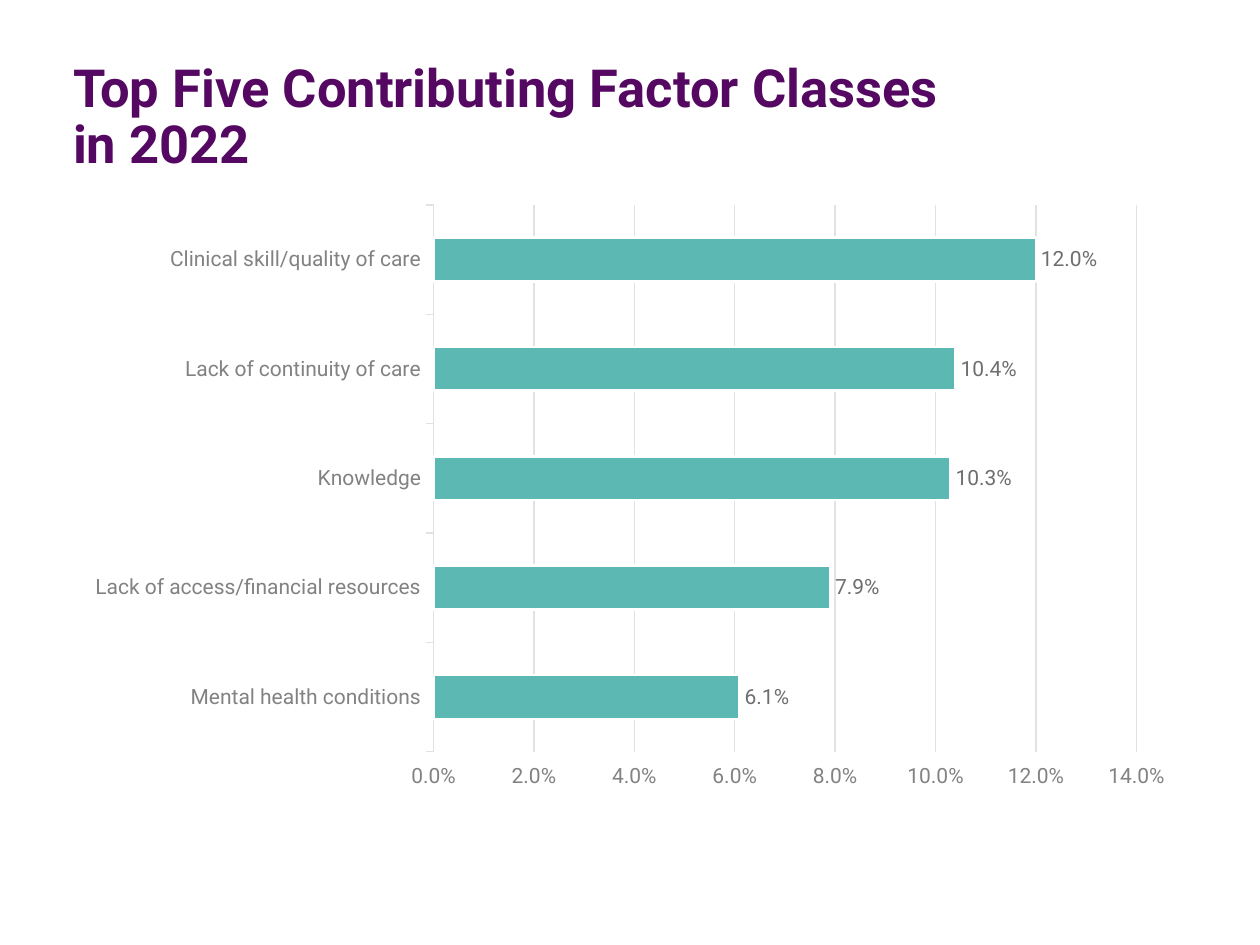
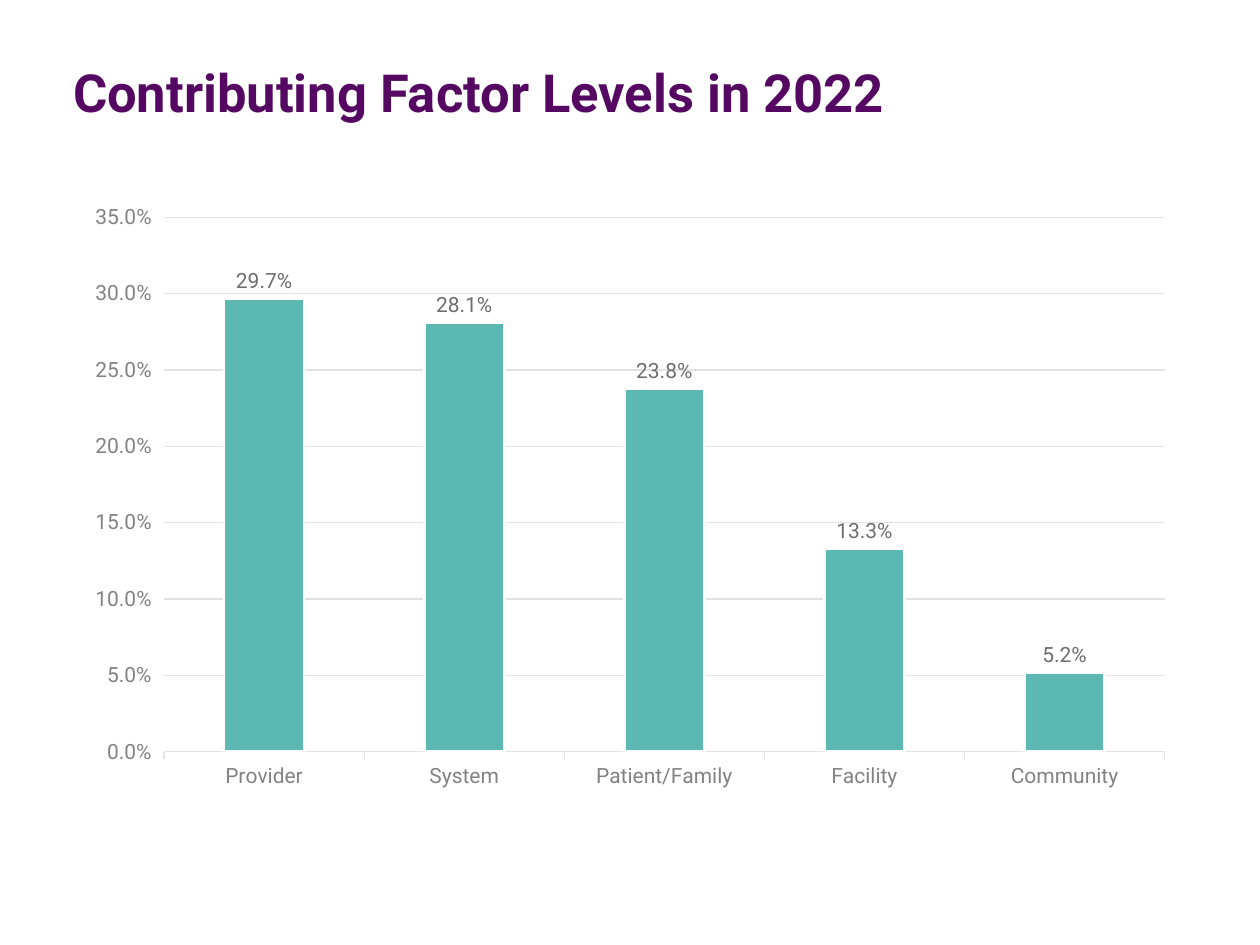
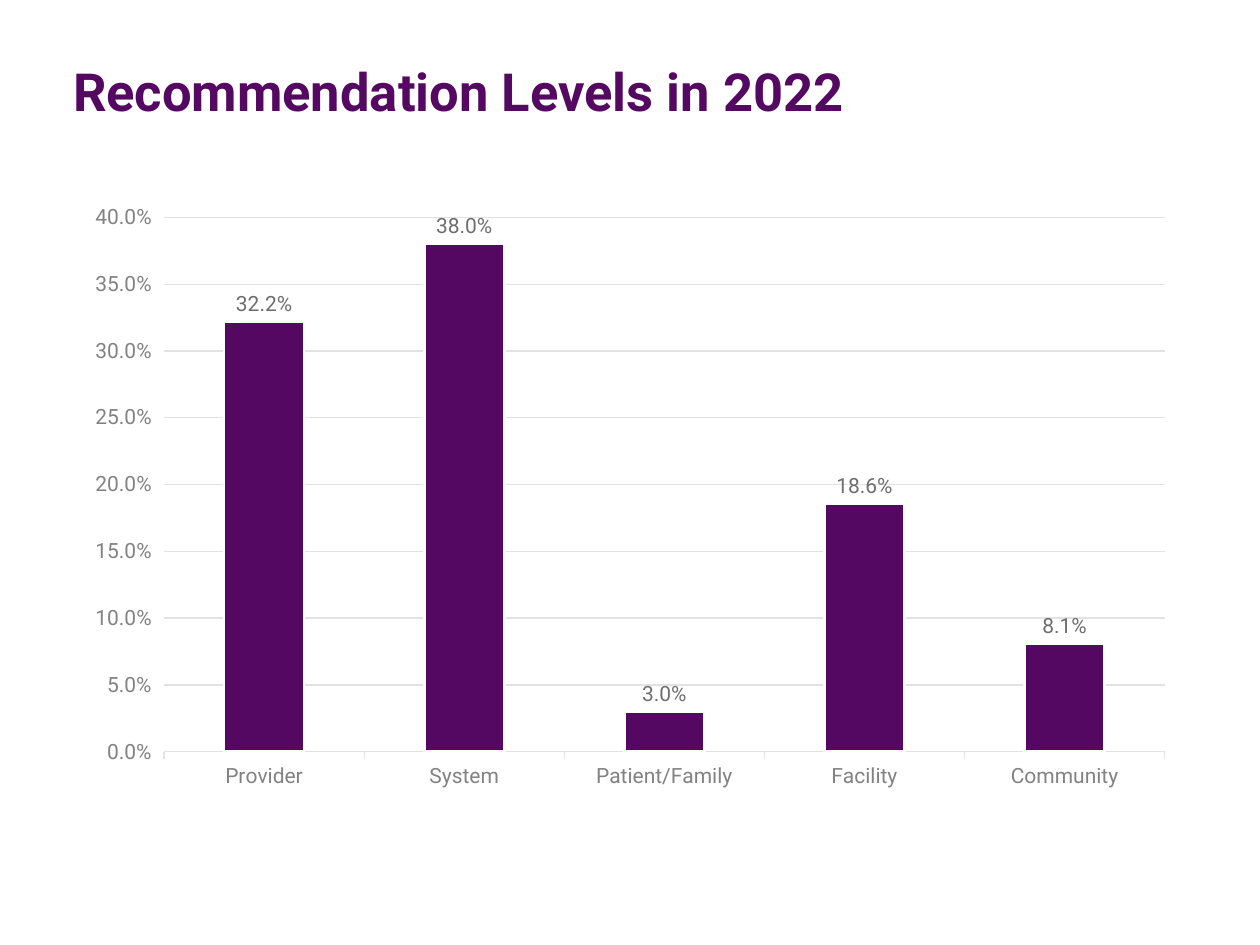
from pptx import Presentation
from pptx.chart import data
from pptx.dml.color import RGBColor
from pptx.enum import chart as ch, text
from pptx.util import Pt

FONT = "Roboto"
COLORS = {
    "purple": "550861",
    "teal": "5CB8B2",
    "white": "FFFFFF",
    "grid": "E2E2E2",
    "axis": "828282",
    "label": "6E6E6E",
    "body": "3E3E3E",
}
LEFT, TITLE_TOP, TITLE_WIDTH = 41.76, 25.2, 516.24
CHART_TOP, CHART_WIDTH, CHART_HEIGHT = 110.16, 636.48, 347.76
PERCENT = "0.0%"
LEVELS = ["Provider", "System", "Patient/Family", "Facility", "Community"]
CLASSES = [
    "Mental health conditions",
    "Lack of access/financial resources",
    "Knowledge",
    "Lack of continuity of care",
    "Clinical skill/quality of care",
]
BAR = ch.XL_CHART_TYPE.BAR_CLUSTERED
COLUMN = ch.XL_CHART_TYPE.COLUMN_CLUSTERED
SLIDES = [
    ("Top Five Contributing Factor Classes in 2022", 84.96, BAR, CLASSES,
     [0.061, 0.079, 0.103, 0.104, 0.12], "teal", 0.14, 0.02),
    ("Contributing Factor Levels in 2022", 59.04, COLUMN, LEVELS,
     [0.297, 0.281, 0.238, 0.133, 0.052], "teal", 0.35, 0.05),
    ("Recommendation Levels in 2022", 57.6, COLUMN, LEVELS,
     [0.322, 0.38, 0.03, 0.186, 0.081], "purple", 0.4, 0.05),
]


def rgb(name):
    return RGBColor.from_string(COLORS[name])


def style_font(font, size, color, bold=False):
    font.name = FONT
    font.size = Pt(size)
    font.bold = bold
    font.color.rgb = rgb(color)


def style_line(line, color, width):
    line.color.rgb = rgb(color)
    line.width = Pt(width)


def add_title(slide, title, height):
    sp = slide.shapes.add_textbox(Pt(LEFT), Pt(TITLE_TOP), Pt(TITLE_WIDTH), Pt(height))
    tf = sp.text_frame
    tf.word_wrap = True
    tf.vertical_anchor = text.MSO_ANCHOR.MIDDLE
    tf.margin_left = 0
    tf.margin_right = tf.margin_top = tf.margin_bottom = Pt(7.2)
    p = tf.paragraphs[0]
    p.line_spacing = 0.9
    r = p.add_run()
    r.text = title
    style_font(r.font, 30, "purple", bold=True)


def style_axes(chart, maximum, step):
    cat, val = chart.category_axis, chart.value_axis
    for axis in (cat, val):
        axis.major_tick_mark = ch.XL_TICK_MARK.OUTSIDE
        axis.minor_tick_mark = ch.XL_TICK_MARK.NONE
        style_font(axis.tick_labels.font, 12, "axis")
    cat.has_major_gridlines = False
    style_line(cat.format.line, "grid", 0.75)
    val.has_major_gridlines = True
    style_line(val.major_gridlines.format.line, "grid", 0.75)
    val.format.line.fill.background()
    val.minimum_scale, val.maximum_scale, val.major_unit = 0, maximum, step
    val.tick_labels.number_format = PERCENT
    val.tick_labels.number_format_is_linked = False


def add_percent_chart(slide, kind, categories, values, color, maximum, step):
    cd = data.CategoryChartData(number_format=PERCENT)
    cd.categories = categories
    cd.add_series("Series 1", values)
    chart = slide.shapes.add_chart(kind, Pt(LEFT), Pt(CHART_TOP), Pt(CHART_WIDTH),
                                   Pt(CHART_HEIGHT), cd).chart
    chart.has_title = False
    chart.has_legend = False
    style_font(chart.font, 10, "body")
    style_axes(chart, maximum, step)
    plot = chart.plots[0]
    plot.gap_width = 150
    plot.vary_by_categories = False
    series = plot.series[0]
    series.format.fill.solid()
    series.format.fill.fore_color.rgb = rgb(color)
    style_line(series.format.line, "white", 1.5)
    labels = series.data_labels
    labels.show_value = True
    labels.position = ch.XL_LABEL_POSITION.OUTSIDE_END
    labels.number_format = PERCENT
    labels.number_format_is_linked = False
    style_font(labels.font, 12, "label")


def main():
    prs = Presentation()
    prs.slide_width, prs.slide_height = Pt(720), Pt(540)
    for title, title_height, *chart_args in SLIDES:
        slide = prs.slides.add_slide(prs.slide_layouts[6])
        add_title(slide, title, title_height)
        add_percent_chart(slide, *chart_args)
    prs.save("out.pptx")


if __name__ == "__main__":
    main()
